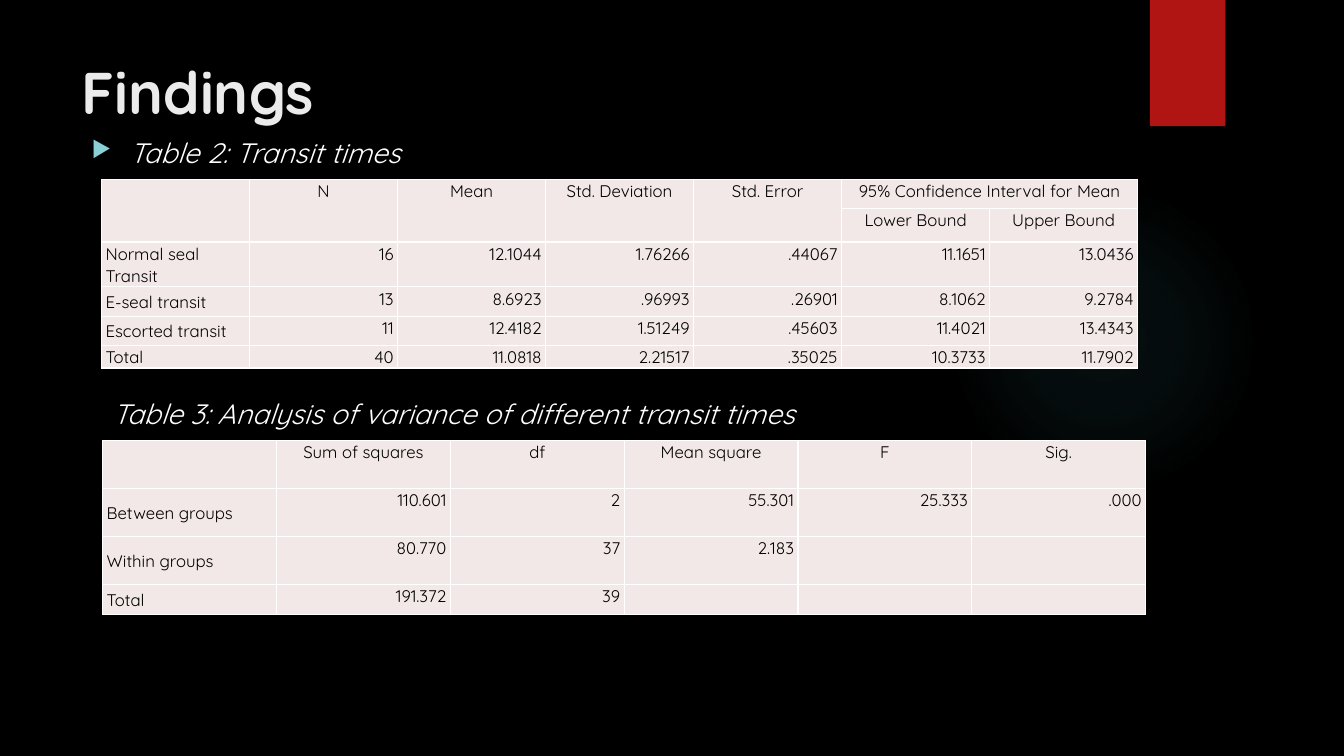
from pptx import Presentation
from pptx import oxml
from pptx import util as u
from pptx.dml.color import RGBColor
from pptx.enum import shapes, text
from pptx.oxml import ns

BLACK = RGBColor(0x00, 0x00, 0x00)
WHITE = RGBColor(0xFF, 0xFF, 0xFF)
OFF_WHITE = RGBColor(0xEB, 0xEB, 0xEB)
RED = RGBColor(0xB0, 0x15, 0x13)
TEAL = RGBColor(0x50, 0xB9, 0xC1)
PALE_TEAL = RGBColor(0x8A, 0xD0, 0xD6)
PALE_PINK = RGBColor(0xF2, 0xE8, 0xE7)
FONT = "Quicksand"
LEFT, CENTER, RIGHT = text.PP_ALIGN.LEFT, text.PP_ALIGN.CENTER, text.PP_ALIGN.RIGHT
TOP, MIDDLE = text.MSO_ANCHOR.TOP, text.MSO_ANCHOR.MIDDLE

TRANSIT_TIMES = [
    ["", "N", "Mean", "Std. Deviation", "Std. Error", "95% Confidence Interval for Mean", ""],
    ["", "", "", "", "", "Lower Bound", "Upper Bound"],
    ["Normal seal Transit", "16", "12.1044", "1.76266", ".44067", "11.1651", "13.0436"],
    ["E-seal transit", "13", "8.6923", ".96993", ".26901", "8.1062", "9.2784"],
    ["Escorted transit", "11", "12.4182", "1.51249", ".45603", "11.4021", "13.4343"],
    ["Total", "40", "11.0818", "2.21517", ".35025", "10.3733", "11.7902"],
]
VARIANCE = [
    ["", "Sum of squares", "df", "Mean square", "F", "Sig."],
    ["Between groups", "110.601", "2", "55.301", "25.333", ".000"],
    ["Within groups", "80.770", "37", "2.183", "", ""],
    ["Total", "191.372", "39", "", "", ""],
]


def xml(tag, attributes="", inner=""):
    return oxml.parse_xml(f'<a:{tag} {ns.nsdecls("a")} {attributes}>{inner}</a:{tag}>')


def write(frame, words, size, color, bold=False, italic=False, align=LEFT,
          anchor=TOP, spacing=None, after=None):
    frame.word_wrap = True
    frame.vertical_anchor = anchor
    paragraph = frame.paragraphs[0]
    paragraph.alignment = align
    paragraph.line_spacing = spacing
    paragraph.space_after = after
    if words:
        run = paragraph.add_run()
        run.text = words
        run.font.name = FONT
        run.font.size = u.Pt(size)
        run.font.bold = bold
        run.font.italic = italic
        run.font.color.rgb = color
    return paragraph


def add_decoration(slide, kind, left, top, width, height, color):
    shape = slide.shapes.add_shape(kind, u.Cm(left), u.Cm(top), u.Cm(width), u.Cm(height))
    shape.shadow.inherit = False
    shape.line.fill.background()
    shape.fill.solid()
    shape.fill.fore_color.rgb = color
    return shape


def fade_out(shape, color, stops):
    solid = shape._element.spPr.find(ns.qn("a:solidFill"))
    gradient_stops = "".join(
        f'<a:gs pos="{pos * 1000}"><a:srgbClr val="{color}">'
        f'<a:alpha val="{alpha * 1000}"/></a:srgbClr></a:gs>' for pos, alpha in stops)
    solid.getparent().replace(solid, xml(
        "gradFill", "", f"<a:gsLst>{gradient_stops}</a:gsLst>"
        '<a:path path="circle"><a:fillToRect l="50000" t="50000" r="50000" b="50000"/></a:path>'))


def add_caption(slide, words, left, top, width, height, **style):
    box = slide.shapes.add_textbox(u.Cm(left), u.Cm(top), u.Cm(width), u.Cm(height))
    return write(box.text_frame, words, 20, WHITE, italic=True, **style)


def add_bullet(paragraph, symbol, color, percent, indent):
    properties = paragraph._p.get_or_add_pPr()
    properties.set("marL", str(u.Cm(indent)))
    properties.set("indent", str(-u.Cm(indent)))
    properties.append(xml("buClr", "", f'<a:srgbClr val="{color}"/>'))
    properties.append(xml("buSzPct", f'val="{percent * 1000}"'))
    properties.append(xml("buChar", f'char="{symbol}"'))


def format_cell(cell, words, align, anchor):
    cell.margin_left = cell.margin_right = u.Cm(0.1)
    cell.margin_top = cell.margin_bottom = 0
    cell.vertical_anchor = anchor
    cell.fill.solid()
    cell.fill.fore_color.rgb = PALE_PINK
    write(cell.text_frame, words, 12, BLACK, align=align, anchor=None, spacing=u.Pt(16))
    for position, side in enumerate("LRTB"):
        border = xml(f"ln{side}", f'w="{u.Pt(1)}"',
                     f'<a:solidFill><a:srgbClr val="{WHITE}"/></a:solidFill>')
        cell._tc.get_or_add_tcPr().insert(position, border)


def add_statistics(slide, rows, left, top, column_width, row_heights, header_rows=1):
    table = slide.shapes.add_table(
        len(rows), len(rows[0]), u.Cm(left), u.Cm(top),
        u.Cm(column_width * len(rows[0])), u.Cm(sum(row_heights))).table
    for column in table.columns:
        column.width = u.Cm(column_width)
    for r, (values, height) in enumerate(zip(rows, row_heights)):
        table.rows[r].height = u.Cm(height)
        for c, value in enumerate(values):
            if r < header_rows:
                align, anchor = CENTER, TOP
            elif c == 0:
                align, anchor = LEFT, MIDDLE
            else:
                align, anchor = RIGHT, TOP
            format_cell(table.cell(r, c), value, align, anchor)
    return table


def main():
    deck = Presentation()
    deck.slide_width, deck.slide_height = u.Cm(33.87), u.Cm(19.05)
    slide = deck.slides.add_slide(deck.slide_layouts[5])
    slide.background.fill.solid()
    slide.background.fill.fore_color.rgb = BLACK

    # Glow and red tab
    glow = add_decoration(slide, shapes.MSO_SHAPE.OVAL, 23.9, 4.65, 7.82, 7.82, TEAL)
    fade_out(glow, TEAL, [(0, 7), (36, 6), (69, 0)])
    add_decoration(slide, shapes.MSO_SHAPE.RECTANGLE, 28.98, 0, 1.9, 3.18, RED)

    # Title
    title = slide.shapes.title
    title.left, title.top = u.Cm(1.8), u.Cm(1.27)
    title.width, title.height = u.Cm(26.14), u.Cm(1.7)
    title.text_frame.auto_size = text.MSO_AUTO_SIZE.NONE
    write(title.text_frame, "Findings", 42, OFF_WHITE, bold=True)

    # Table 2
    transit_caption = add_caption(slide, "Table 2: Transit times", 2.06, 3.3, 24.84, 11.66)
    add_bullet(transit_caption, "▶", PALE_TEAL, 80, 0.95)
    transit = add_statistics(slide, TRANSIT_TIMES, 2.56, 4.52, 3.73,
                             [0.74, 0.84, 1.13, 0.74, 0.74, 0.56], header_rows=2)
    for column in range(5):
        transit.cell(0, column).merge(transit.cell(1, column))
    transit.cell(0, 5).merge(transit.cell(0, 6))

    # Table 3
    add_caption(slide, "Table 3: Analysis of variance of different transit times",
                2.59, 9.8, 18.42, 1.09, spacing=1.07, after=u.Pt(8))
    add_statistics(slide, VARIANCE, 2.59, 11.1, 4.38, [1.21, 1.21, 1.21, 0.58])

    deck.save("out.pptx")


if __name__ == "__main__":
    main()
